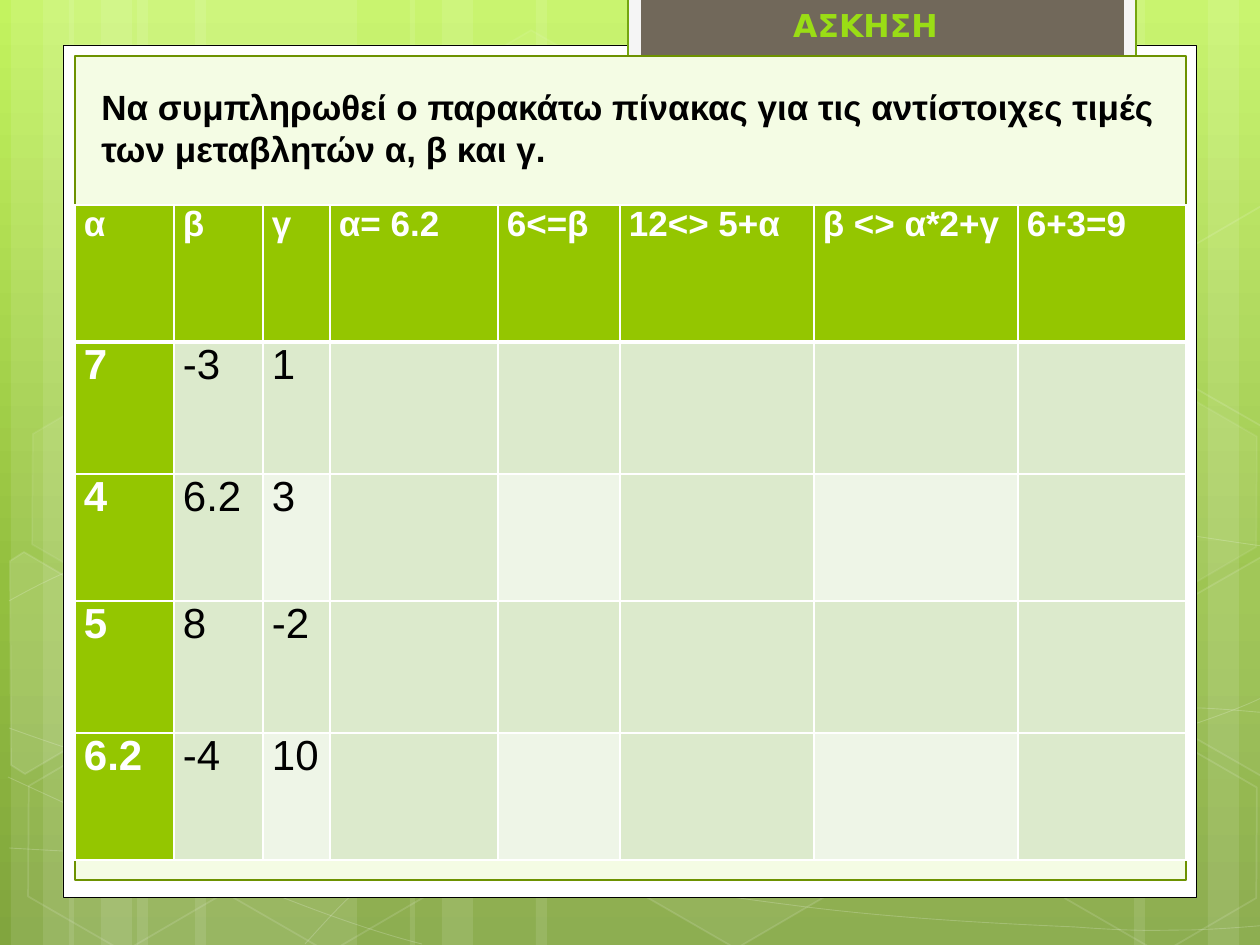
from copy import deepcopy
from dataclasses import dataclass

from lxml.etree import SubElement
from pptx import Presentation
from pptx.dml.color import RGBColor
from pptx.enum.shapes import MSO_SHAPE as Preset
from pptx.enum.text import MSO_ANCHOR as Anchor, MSO_AUTO_SIZE as AutoSize, PP_ALIGN as Align
from pptx.oxml.ns import qn
from pptx.util import Pt

PX = 914400 / 126


@dataclass(frozen=True)
class Theme:
    """Colours, fonts and type sizes of the slide."""
    white: str = "FFFFFF"
    black: str = "000000"
    sky: tuple = ((0, "C3F35F"), (0.62, "93BF3F"), (1, "81A53E"))
    tab_pale: str = "F5F5F5"
    tab_edge: str = "74A510"
    tab_dark: str = "71685A"
    card: str = "F4FCE4"
    card_edge: str = "6D9200"
    title: str = "9ADD15"
    header: str = "94C600"
    band: str = "DCEACC"
    band_light: str = "EEF5E7"
    body_font: str = "Arial"
    title_font: str = "DejaVu Sans"
    title_size: int = 18
    text_size: int = 20
    value_size: int = 24


@dataclass(frozen=True)
class Box:
    """A rectangle in px."""
    left: int
    top: int
    width: int
    height: int

    def inner(self, left, top, width, height):
        """Return a box placed relative to this one."""
        return Box(self.left + left, self.top + top, width, height)

    def emu(self):
        """Return left, top, width and height in EMU."""
        return [emu(n) for n in (self.left, self.top, self.width, self.height)]


THEME = Theme()
PAGE = Box(0, 0, 1260, 945)
FRAME = Box(63, 45, 1134, 853)

CURVES = (
    ((9, 848), (77, 852, 145, 856, 239, 854), (334, 853, 451, 851, 577, 838),
     (703, 825, 882, 801, 998, 777), (1113, 753, 1231, 715, 1269, 694)),
    ((9, 601), (45, 581, 82, 562, 152, 543), (224, 524, 326, 496, 437, 488),
     (549, 479, 685, 478, 824, 488), (963, 498, 1193, 537, 1269, 547)),
    ((8, 777), (160, 847, 311, 916, 422, 944)),
    ((9, 728), (48, 742, 88, 756, 161, 776), (234, 795, 344, 827, 450, 848),
     (554, 869, 687, 892, 791, 905), (896, 919, 1008, 924, 1075, 927),
     (1142, 932, 1158, 930, 1191, 930), (1223, 929, 1246, 927, 1269, 925)),
    ((305, 944), (328, 919, 350, 893, 381, 871), (411, 847, 454, 823, 489, 805),
     (524, 789, 546, 780, 591, 767), (638, 754, 722, 737, 766, 728),
     (811, 719, 818, 719, 857, 717), (896, 713, 958, 709, 1000, 708),
     (1045, 707, 1116, 708, 1116, 708), (1201, 708),
     (1223, 709, 1245, 711, 1256, 712), (1268, 713, 1264, 712, 1268, 713)),
)
HEXAGONS = ((421, 45, 4, 8), (626, 742, 6, 12), (14, 745, 0, 12), (18, 393, 7, 8),
            (219, 746, 0, 12), (949, 571, 10, 12), (1051, 747, 0, 12), (1051, 396, 7, 8))
CUT_HEXAGONS = (
    (10, ((10, 561), (24, 552), (121, 609), (120, 718), (25, 774), (11, 765))),
    (4, ((1167, 611), (1263, 556), (1271, 562), (1271, 772), (1263, 777), (1167, 722))),
    (0, ((1167, 261), (1263, 205), (1273, 211), (1271, 422), (1263, 427), (1167, 372))),
)
COLUMNS = (99, 89, 67, 168, 122, 194, 204, 168)
ROWS = (137, 132, 127, 132, 127)
VALUES = (
    ("α", "β", "γ", "α= 6.2", "6<=β", "12<> 5+α", "β <> α*2+γ", "6+3=9"),
    ("7", "-3", "1"),
    ("4", "6.2", "3"),
    ("5", "8", "-2"),
    ("6.2", "-4", "10"),
)


def emu(length):
    """Turn px into EMU."""
    return round(length * PX)


def set_opacity(shape, xpath, percent):
    """Make the colour found under the shape partly transparent."""
    color = shape.element.find(f"{qn('p:spPr')}/{xpath}{qn('a:solidFill')}/{qn('a:srgbClr')}")
    SubElement(color, qn("a:alpha"), val=str(percent * 1000))


def style(shape, fill=None, line=None, width=1, fill_opacity=100, line_opacity=100):
    """Set fill, line and opacity of a shape and drop its shadow."""
    shape.shadow.inherit = False
    if fill and fill_opacity:
        shape.fill.solid()
        shape.fill.fore_color.rgb = RGBColor.from_string(fill)
        if fill_opacity < 100:
            set_opacity(shape, "", fill_opacity)
    else:
        shape.fill.background()
    if line:
        shape.line.color.rgb = RGBColor.from_string(line)
        shape.line.width = Pt(width)
        if line_opacity < 100:
            set_opacity(shape, f"{qn('a:ln')}/", line_opacity)
    else:
        shape.line.fill.background()


def add_panel(slide, box, **look):
    """Add a styled rectangle."""
    style(slide.shapes.add_shape(Preset.RECTANGLE, *box.emu()), **look)


def add_outline(slide, box, points, closed, **look):
    """Add a styled freeform through points relative to the box."""
    points = [(emu(box.left + x), emu(box.top + y)) for x, y in points]
    builder = slide.shapes.build_freeform(*points[0], scale=1)
    builder.add_line_segments(points[1:], close=closed)
    shape = builder.convert_to_shape()
    style(shape, **look)
    return shape


def add_curve(slide, box, start, *segments, **look):
    """Add an open outline whose six-number segments are cubic curves."""
    shape = add_outline(slide, box, [start, *(segment[-2:] for segment in segments)], False, **look)
    lines = list(shape.element.iter(qn("a:lnTo")))
    for line, segment in zip(lines, segments):
        if len(segment) == 6:
            bend = line.makeelement(qn("a:cubicBezTo"), {})
            for x, y in zip(segment[::2], segment[1::2]):
                SubElement(bend, qn("a:pt"), x=str(emu(box.left + x) - shape.left),
                           y=str(emu(box.top + y) - shape.top))
            line.getparent().replace(line, bend)


def set_font(paragraph, name, size, color, bold=True):
    """Set the font of a whole paragraph."""
    paragraph.font.name = name
    paragraph.font.size = Pt(size)
    paragraph.font.bold = bold
    paragraph.font.color.rgb = RGBColor.from_string(color)


def paint_background(slide):
    """Fill the background with the three-stop vertical gradient."""
    fill = slide.background.fill
    fill.gradient()
    fill.gradient_angle = 270
    stop_list = next(slide.element.iter(qn("a:gsLst")))
    stop_list.append(deepcopy(stop_list[-1]))
    for stop, (position, color) in zip(fill.gradient_stops, THEME.sky):
        stop.position = position
        stop.color.rgb = RGBColor.from_string(color)


def add_scenery(slide, box):
    """Add the translucent stripes, curves and hexagons."""
    for edge, wide, direction in ((137, 220, 1), (195, 220, 1), (1145, 220, -1), (536, 389, 1)):
        for shift, width in ((0, wide), (126, 63), (94, 105)):
            start = edge - direction * shift
            left = start if direction > 0 else start - width
            add_panel(slide, box.inner(left, 0, width, box.height), fill=THEME.white, fill_opacity=10)
    for curve in CURVES:
        add_curve(slide, box, *curve, line=THEME.white, width=0.5, line_opacity=20)
    for left, top, fill_opacity, line_opacity in HEXAGONS:
        hexagon = slide.shapes.add_shape(Preset.HEXAGON, *box.inner(left, top, 220, 192).emu())
        hexagon.adjustments[0] = 0.285
        hexagon.rotation = 30
        style(hexagon, THEME.white, THEME.white, 1, fill_opacity, line_opacity)
    for fill_opacity, points in CUT_HEXAGONS:
        add_outline(slide, box, points, True, fill=THEME.white, line=THEME.white,
                    fill_opacity=fill_opacity, line_opacity=12)


def add_frame(slide, box):
    """Add the white frame, the title tab and the pale card."""
    add_panel(slide, box, fill=THEME.white, line=THEME.black, width=0.5)
    add_panel(slide, box.inner(565, -48, 508, 97), fill=THEME.tab_pale, line=THEME.tab_edge, width=1.25)
    add_panel(slide, box.inner(578, -48, 483, 86), fill=THEME.tab_dark)
    add_panel(slide, box.inner(12, 11, 1111, 824), fill=THEME.card, line=THEME.card_edge, width=0.75)


def add_title(slide, box):
    """Place the title on its tab, in front of the frame."""
    title = slide.shapes.title
    title.element.getparent().append(title.element)
    title.left, title.top, title.width, title.height = box.emu()
    frame = title.text_frame
    frame.text = "ΑΣΚΗΣΗ"
    frame.word_wrap = False
    frame.auto_size = AutoSize.SHAPE_TO_FIT_TEXT
    frame.vertical_anchor = Anchor.TOP
    frame.paragraphs[0].alignment = Align.CENTER
    set_font(frame.paragraphs[0], THEME.title_font, THEME.title_size, THEME.title)


def add_task(slide, box):
    """Add the wording of the exercise."""
    frame = slide.shapes.add_textbox(*box.emu()).text_frame
    frame.word_wrap = True
    frame.auto_size = AutoSize.SHAPE_TO_FIT_TEXT
    frame.text = "Να συμπληρωθεί ο παρακάτω πίνακας για τις αντίστοιχες τιμές των μεταβλητών α, β και γ."
    frame.paragraphs[0].space_after = Pt(12)
    set_font(frame.paragraphs[0], THEME.body_font, THEME.text_size, THEME.black)


def set_borders(cell, top, bottom):
    """Draw white cell borders, with top and bottom widths in points."""
    properties = cell._tc.get_or_add_tcPr()
    for index, (side, width) in enumerate((("L", 1), ("R", 1), ("T", top), ("B", bottom))):
        line = properties.makeelement(qn(f"a:ln{side}"), {"w": str(Pt(width))})
        SubElement(SubElement(line, qn("a:solidFill")), qn("a:srgbClr"), val=THEME.white)
        properties.insert(index, line)


def format_cell(cell, row, column, text):
    """Fill one cell according to its row and column."""
    heading = row == 0 or column == 0
    light = row % 2 == 0 and column % 2 == 0
    color = THEME.header if heading else THEME.band_light if light else THEME.band
    cell.fill.solid()
    cell.fill.fore_color.rgb = RGBColor.from_string(color)
    set_borders(cell, top=3 if row == 1 else 1, bottom=3 if row == 0 else 1)
    cell.margin_left = cell.margin_right = emu(9)
    cell.margin_top = cell.margin_bottom = 0
    if text:
        cell.text = text
        paragraph = cell.text_frame.paragraphs[0]
        paragraph.alignment = Align.JUSTIFY
        set_font(paragraph, THEME.body_font, THEME.value_size if row else THEME.text_size,
                 THEME.white if heading else THEME.black, heading)


def add_truth_table(slide, box):
    """Add the table of values and expressions."""
    table = slide.shapes.add_table(len(ROWS), len(COLUMNS), *box.emu()).table
    for column, width in zip(table.columns, COLUMNS):
        column.width = emu(width)
    for row, height in enumerate(ROWS):
        table.rows[row].height = emu(height)
        for column in range(len(COLUMNS)):
            text = VALUES[row][column] if column < len(VALUES[row]) else ""
            format_cell(table.cell(row, column), row, column, text)


def main():
    """Build and save the presentation."""
    presentation = Presentation()
    presentation.slide_width, presentation.slide_height = PAGE.emu()[2:]
    slide = presentation.slides.add_slide(presentation.slide_layouts[5])
    paint_background(slide)
    add_scenery(slide, PAGE)
    add_frame(slide, FRAME)
    add_task(slide, FRAME.inner(26, 34, 1121, 97))
    add_title(slide, FRAME.inner(717, -45, 171, 50))
    add_truth_table(slide, FRAME.inner(12, 160, sum(COLUMNS), sum(ROWS)))
    presentation.save("out.pptx")


if __name__ == "__main__":
    main()
